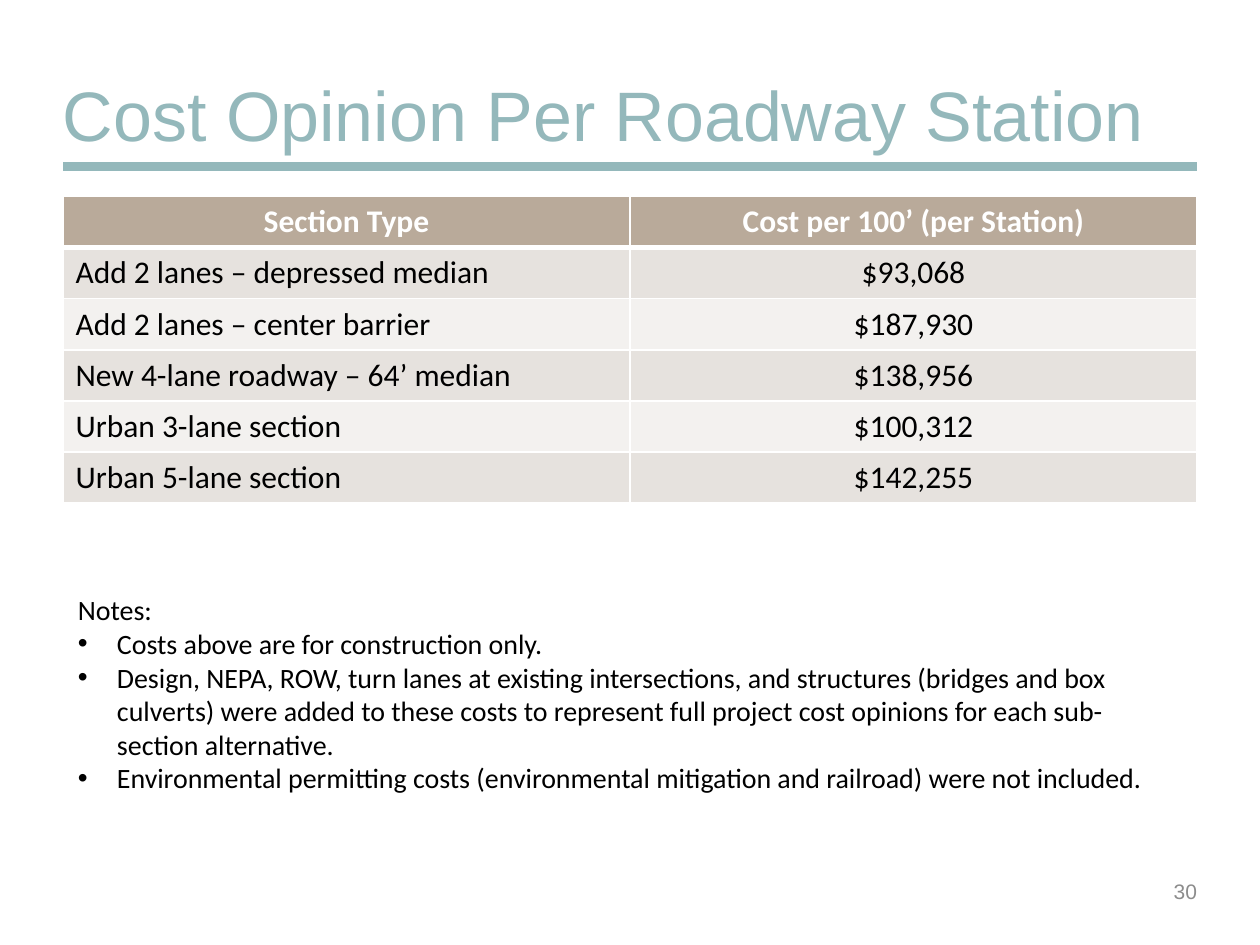
"""Build the slide of roadway cost opinions per station."""
from dataclasses import dataclass

from lxml.etree import SubElement
from pptx import Presentation
from pptx.dml.color import RGBColor
from pptx.enum.shapes import MSO_CONNECTOR
from pptx.enum.text import MSO_ANCHOR, PP_ALIGN
from pptx.oxml.ns import qn
from pptx.util import Emu, Inches, Pt

COLORS = {
    "teal": "94B8BB", "header": "B9AA9A", "odd": "E6E2DE",
    "even": "F3F1EF", "white": "FFFFFF", "black": "000000", "gray": "8C8C8C",
}
WIDTH, HEIGHT = Inches(10), Inches(7.5)
MARGIN = 0.05
CONTENT = 1 - 2 * MARGIN
HEADER = ("Section Type", "Cost per 100’ (per Station)")
NOTES = (
    "Costs above are for construction only.",
    "Design, NEPA, ROW, turn lanes at existing intersections, and structures "
    "(bridges and box culverts) were added to these costs to represent full "
    "project cost opinions for each sub-section alternative.",
    "Environmental permitting costs (environmental mitigation and railroad) "
    "were not included.",
)


@dataclass(frozen=True)
class Section:
    """A roadway section and its cost per station."""
    name: str
    cost: int


SECTIONS = (
    Section("Add 2 lanes – depressed median", 93068),
    Section("Add 2 lanes – center barrier", 187930),
    Section("New 4-lane roadway – 64’ median", 138956),
    Section("Urban 3-lane section", 100312),
    Section("Urban 5-lane section", 142255),
)


def rgb(name: str) -> RGBColor:
    """Return a named colour."""
    return RGBColor.from_string(COLORS[name])


def across(share: float) -> Emu:
    """Return a share of the slide's width."""
    return Emu(round(WIDTH * share))


def down(share: float) -> Emu:
    """Return a share of the slide's height."""
    return Emu(round(HEIGHT * share))


def write(p, text: str, *, size: float, font: str = "Calibri", color: str = "black",
          bold: bool = False, align=PP_ALIGN.LEFT, spacing: float = 1.0,
          bullet: bool = False) -> None:
    """Write formatted text into a paragraph."""
    p.alignment, p.line_spacing = align, spacing
    if bullet:
        indent = Inches(0.31)
        pPr = p._p.get_or_add_pPr()
        pPr.set("marL", str(indent))
        pPr.set("indent", str(-indent))
        SubElement(pPr, qn("a:buFont"), typeface="Arial")
        SubElement(pPr, qn("a:buChar"), char="•")
    r = p.add_run()
    r.text = text
    r.font.size, r.font.name, r.font.bold = Pt(size), font, bold
    r.font.color.rgb = rgb(color)


def add_box(s, x: float, y: float, w: float, h: float, *, anchor=MSO_ANCHOR.TOP,
            left: float = 0.1, right: float = 0.1):
    """Add a wrapped text box placed by shares of the slide."""
    tf = s.shapes.add_textbox(across(x), down(y), across(w), down(h)).text_frame
    tf.word_wrap, tf.vertical_anchor = True, anchor
    tf.margin_left, tf.margin_right = Inches(left), Inches(right)
    return tf


def add_rule(s, y: float) -> None:
    """Draw the rule under the title."""
    line = s.shapes.add_connector(
        MSO_CONNECTOR.STRAIGHT, across(MARGIN), down(y), across(1 - MARGIN), down(y))
    line.line.color.rgb, line.line.width = rgb("teal"), Pt(5)
    SubElement(line._element.spPr, qn("a:effectLst"))


def style_cell(cell, fill: str, widths: dict[str, float]) -> None:
    """Give a cell its white borders and its fill."""
    tcPr = cell._tc.get_or_add_tcPr()
    for side, width in widths.items():
        ln = SubElement(tcPr, qn(f"a:ln{side}"), w=str(Pt(width)))
        solid = SubElement(ln, qn("a:solidFill"))
        SubElement(solid, qn("a:srgbClr"), val=COLORS["white"])
    cell.fill.solid()
    cell.fill.fore_color.rgb = rgb(fill)


def add_cost_table(s, y: float, h: float) -> None:
    """Add the table of costs by section type."""
    rows = [HEADER] + [(item.name, f"${item.cost:,}") for item in SECTIONS]
    table = s.shapes.add_table(
        len(rows), len(HEADER), across(MARGIN), down(y), across(CONTENT), down(h)).table
    for i, row in enumerate(rows):
        head = i == 0
        fill = "header" if head else ("odd" if i % 2 else "even")
        widths = {"L": 1, "R": 1, "T": 3 if i == 1 else 1, "B": 3 if head else 1}
        for j, text in enumerate(row):
            cell = table.cell(i, j)
            style_cell(cell, fill, widths)
            write(cell.text_frame.paragraphs[0], text, size=18, bold=head,
                  color="white" if head else "black",
                  align=PP_ALIGN.CENTER if head or j else PP_ALIGN.LEFT)


def add_notes(s) -> None:
    """Add the bulleted notes below the table."""
    tf = add_box(s, 0.052, 0.621, 0.895, 0.23)
    write(tf.paragraphs[0], "Notes:", size=16)
    for note in NOTES:
        write(tf.add_paragraph(), note, size=16, bullet=True)


def main() -> None:
    """Build and save the slide."""
    prs = Presentation()
    prs.slide_width, prs.slide_height = WIDTH, HEIGHT
    s = prs.slides.add_slide(prs.slide_layouts[6])
    add_rule(s, 0.176)
    add_cost_table(s, 0.208, 0.324)
    number = add_box(s, 0.909, 0.917, 0.041, 0.053, anchor=MSO_ANCHOR.MIDDLE, right=0)
    write(number.paragraphs[0], "30", size=12, font="Arial", color="gray",
          align=PP_ALIGN.RIGHT)
    title = add_box(s, MARGIN, 0.072, CONTENT, 0.1, anchor=MSO_ANCHOR.BOTTOM, left=0)
    write(title.paragraphs[0], "Cost Opinion Per Roadway Station", size=40,
          font="Arial", color="teal", spacing=0.9)
    add_notes(s)
    prs.save("out.pptx")


if __name__ == "__main__":
    main()
